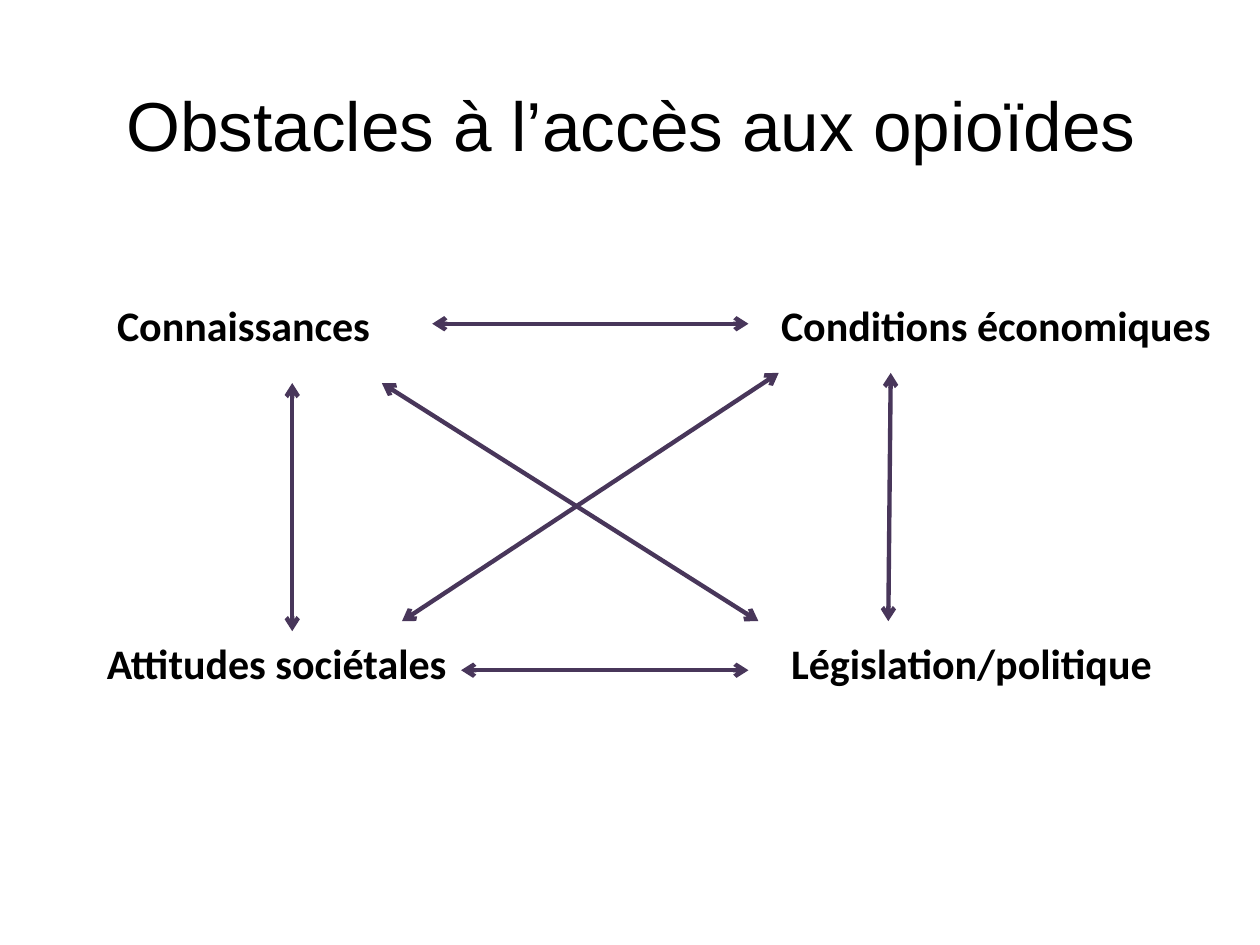
"""Build a slide linking four obstacles to opioid access with two-way arrows."""
from dataclasses import dataclass

from lxml import etree
from pptx import Presentation
from pptx.dml.color import RGBColor
from pptx.enum.shapes import MSO_CONNECTOR
from pptx.enum.text import MSO_ANCHOR, MSO_AUTO_SIZE, PP_ALIGN
from pptx.oxml.ns import qn
from pptx.slide import Slide
from pptx.text.text import Font
from pptx.util import Pt

STRAIGHT = MSO_CONNECTOR.STRAIGHT
MIDDLE = MSO_ANCHOR.MIDDLE
CENTER = PP_ALIGN.CENTER
FIT_SHAPE = MSO_AUTO_SIZE.SHAPE_TO_FIT_TEXT

BLACK = RGBColor(0x00, 0x00, 0x00)
WHITE = RGBColor(0xFF, 0xFF, 0xFF)
PURPLE = RGBColor(0x48, 0x36, 0x5A)

TITLE_FORMAT = {"name": "Arial", "size": Pt(39.6), "bold": False}
LABEL_FORMAT = {"name": "Calibri", "size": Pt(24), "bold": True}

LABEL_HEIGHT = 36
TOP_ROW = 167.8
BOTTOM_ROW = 360.7


@dataclass(frozen=True)
class Label:
    text: str
    left: float
    top: float
    width: float


@dataclass(frozen=True)
class Arrow:
    start_x: float
    start_y: float
    end_x: float
    end_y: float


LABELS = [
    Label("Connaissances", 59.8, TOP_ROW, 160.6),
    Label("Conditions économiques", 439.2, TOP_ROW, 262.8),
    Label("Attitudes sociétales", 54, BOTTOM_ROW, 211.7),
    Label("Législation/politique", 445, BOTTOM_ROW, 223.2),
]

ARROWS = [
    Arrow(247, 185, 427.7, 185),
    Arrow(263.5, 383, 427.7, 383),
    Arrow(507.6, 355, 509, 213.1),
    Arrow(218.2, 218.9, 433.4, 355),
    Arrow(167, 218.9, 167, 360.7),
    Arrow(229.7, 355, 445, 213.1),
]


def format_font(font: Font, settings: dict) -> None:
    for name, value in settings.items():
        setattr(font, name, value)
    font.color.rgb = BLACK


def set_title(page: Slide, text: str) -> None:
    title = page.shapes.title
    placement = {"left": 36.7, "top": 25.9, "width": 648, "height": 90}
    for name, value in placement.items():
        setattr(title, name, Pt(value))
    frame = title.text_frame
    frame.text = text
    frame.vertical_anchor = MIDDLE
    paragraph = frame.paragraphs[0]
    paragraph.alignment = CENTER
    format_font(paragraph.runs[0].font, TITLE_FORMAT)


def draw_label(page: Slide, label: Label) -> None:
    box = page.shapes.add_textbox(
        Pt(label.left), Pt(label.top), Pt(label.width), Pt(LABEL_HEIGHT)
    )
    frame = box.text_frame
    frame.text = label.text
    frame.word_wrap = False
    frame.auto_size = FIT_SHAPE
    format_font(frame.paragraphs[0].runs[0].font, LABEL_FORMAT)


def draw_arrow(page: Slide, arrow: Arrow) -> None:
    connector = page.shapes.add_connector(
        STRAIGHT,
        Pt(arrow.start_x), Pt(arrow.start_y), Pt(arrow.end_x), Pt(arrow.end_y),
    )
    connector.line.color.rgb = PURPLE
    connector.line.width = Pt(2.5)
    outline = connector.line._get_or_add_ln()
    for end in ("a:headEnd", "a:tailEnd"):
        etree.SubElement(outline, qn(end), type="arrow")
    etree.SubElement(connector._element.spPr, qn("a:effectLst"))


def main() -> None:
    deck = Presentation()
    deck.slide_width, deck.slide_height = Pt(720), Pt(540)
    page = deck.slides.add_slide(deck.slide_layouts.get_by_name("Title Only"))
    background = page.background.fill
    background.solid()
    background.fore_color.rgb = WHITE
    set_title(page, "Obstacles à l’accès aux opioïdes")
    for label in LABELS:
        draw_label(page, label)
    for arrow in ARROWS:
        draw_arrow(page, arrow)
    deck.save("out.pptx")


if __name__ == "__main__":
    main()
